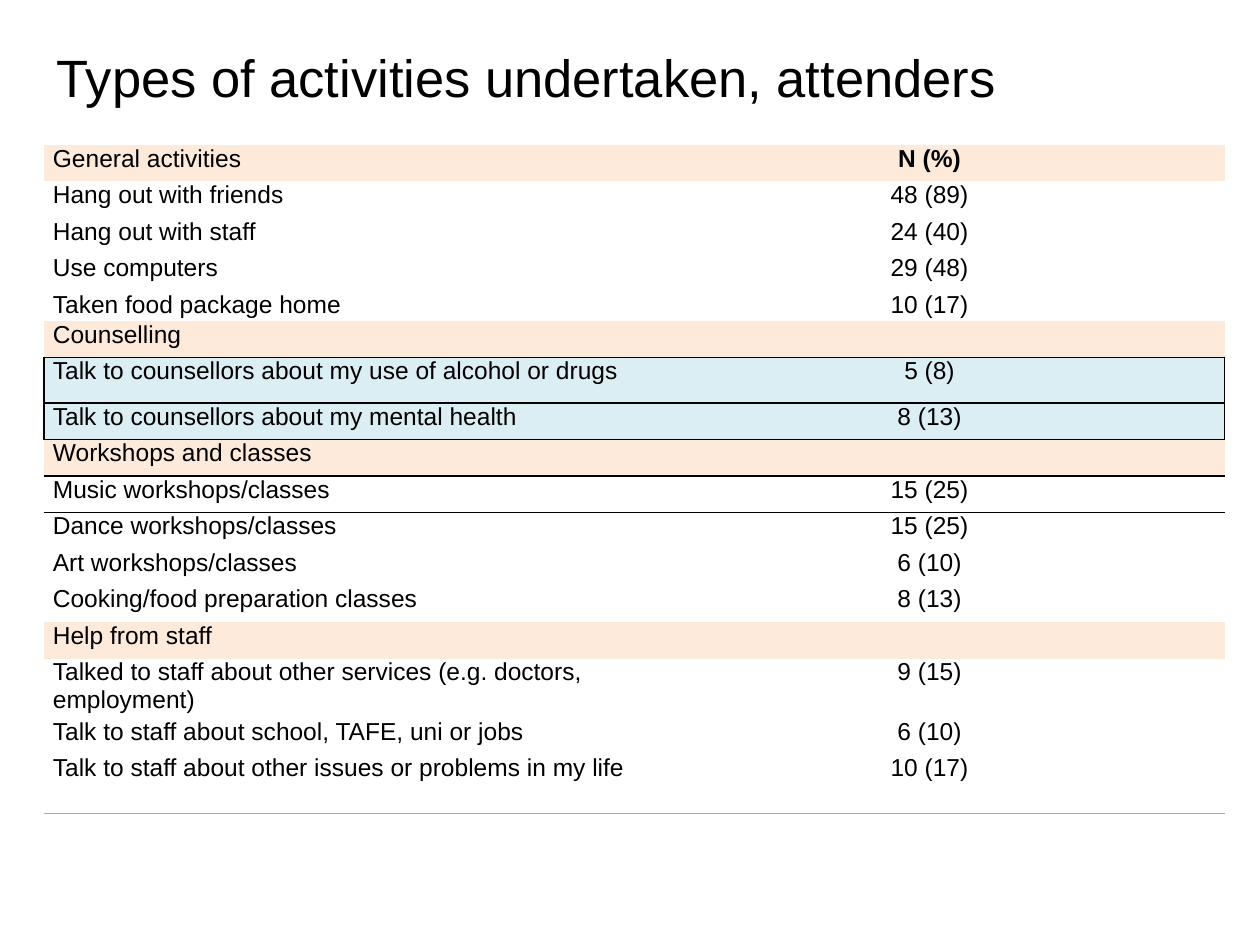
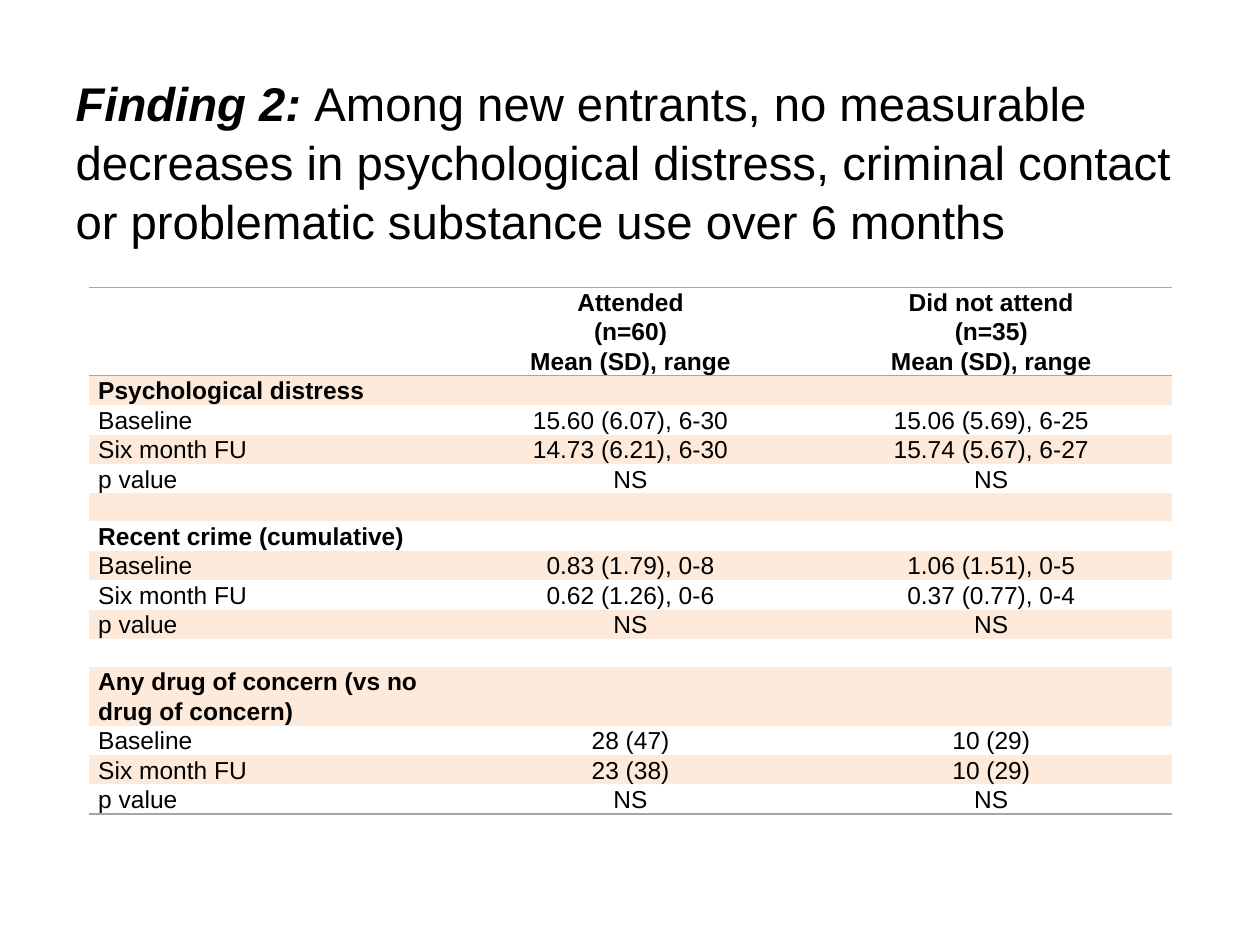
from lxml import etree
from pptx import Presentation
from pptx.dml.color import RGBColor
from pptx.enum.text import MSO_ANCHOR, MSO_AUTO_SIZE, PP_ALIGN
from pptx.oxml.ns import qn
from pptx.util import Inches, Pt

LEFT, MID = PP_ALIGN.LEFT, PP_ALIGN.CENTER
FONT = "Arial"
BLACK, PEACH, BLUE = "000000", "FDEADA", "DBEEF4"
ORANGE, GREY = "F79646", "A6A6A6"
PLAIN = "{2D5ABB26-0587-4C30-8999-92F81FD0307C}"  # table style without grid


def add_page(box, size, runs, space=1.0):
    """Add a slide whose title holds runs of (text, strong)."""
    page = deck.slides.add_slide(deck.slide_layouts[5])
    title = page.shapes.title
    title.left, title.top, title.width, title.height = map(Inches, box)
    frame = title.text_frame
    frame.auto_size = MSO_AUTO_SIZE.NONE
    frame.vertical_anchor = MSO_ANCHOR.MIDDLE
    para = frame.paragraphs[0]
    para.alignment, para.line_spacing = LEFT, space
    para.font.name, para.font.size = FONT, Pt(size)
    para.font.color.rgb = RGBColor.from_string(BLACK)
    for text, strong in runs:
        run = para.add_run()
        run.text = text
        run.font.bold = run.font.italic = strong
    return page


def add_grid(page, spot, wide, rows, highs, fills, bold, edges, space=1.0):
    """Add a table; edges maps a row to (sides, colour, points), bold holds (row, column)."""
    cols = len(rows[0])
    left, top = map(Inches, spot)
    table = page.shapes.add_table(
        len(rows), cols, left, top, Inches(wide), Inches(sum(highs))).table
    table.first_row = table.horz_banding = False
    table._tbl.tblPr.find(qn("a:tableStyleId")).text = PLAIN
    for col in table.columns:
        col.width = Inches(wide / cols)
    for r, texts in enumerate(rows):
        table.rows[r].height = Inches(highs[r])
        sides, tint, width = edges.get(r, ("", BLACK, 1))
        for c, text in enumerate(texts):
            cell = table.cell(r, c)
            cell.margin_left = cell.margin_right = Inches(0.07)
            cell.margin_top = cell.margin_bottom = 0
            cell.text = text
            for para in cell.text_frame.paragraphs:
                para.alignment = MID if c else LEFT
                para.line_spacing = space
                para.font.name, para.font.size = FONT, Pt(14)
                para.font.bold = (r, c) in bold
                para.font.color.rgb = RGBColor.from_string(BLACK)
            props = cell._tc.get_or_add_tcPr()
            for side in sides:
                if (side == "L" and c) or (side == "R" and c < cols - 1):
                    continue
                line = etree.SubElement(props, qn(f"a:ln{side}"), w=str(Pt(width)))
                fill = etree.SubElement(line, qn("a:solidFill"))
                etree.SubElement(fill, qn("a:srgbClr"), val=tint)
            if r in fills:
                cell.fill.solid()
                cell.fill.fore_color.rgb = RGBColor.from_string(fills[r])
            else:
                cell.fill.background()


deck = Presentation()
deck.slide_width, deck.slide_height = Inches(10), Inches(7.5)

# Activities
page = add_page((0.35, 0.29, 9, 0.63), 30,
                [("Types of activities undertaken, attenders", False)])
rows = [
    ("General activities", "N (%)"),
    ("Hang out with friends", "48 (89)"),
    ("Hang out with staff", "24 (40)"),
    ("Use computers", "29 (48)"),
    ("Taken food package home", "10 (17)"),
    ("Counselling", ""),
    ("Talk to counsellors about my use of alcohol or drugs", "5 (8)"),
    ("Talk to counsellors about my mental health", "8 (13)"),
    ("Workshops and classes", ""),
    ("Music workshops/classes", "15 (25)"),
    ("Dance workshops/classes", "15 (25)"),
    ("Art workshops/classes", "6 (10)"),
    ("Cooking/food preparation classes", "8 (13)"),
    ("Help from staff", ""),
    ("Talked to staff about other services (e.g. doctors, employment)", "9 (15)"),
    ("Talk to staff about school, TAFE, uni or jobs", "6 (10)"),
    ("Talk to staff about other issues or problems in my life", "10 (17)"),
]
tall = {4: 0.24, 6: 0.36, 14: 0.47, 16: 0.47}
highs = [tall.get(r, 0.29) for r in range(len(rows))]
fills = dict.fromkeys((0, 5, 8, 13), PEACH) | dict.fromkeys((6, 7), BLUE)
edges = {5: ("B", BLACK, 1), 6: ("LRTB", BLACK, 1), 7: ("LRTB", BLACK, 1),
         8: ("TB", BLACK, 1), 9: ("T", BLACK, 1), 16: ("B", ORANGE, 1)}
add_grid(page, (0.35, 1.15), 9.37, rows, highs, fills, {(0, 1)}, edges)

# Finding 2
page = add_page((0.5, 0.52, 9, 1.5), 27, [
    ("Finding 2: ", True),
    ("Among new entrants, no measurable decreases in psychological distress, "
     "criminal contact or problematic substance use over 6 months", False),
], 1.04)
rows = [
    ("", "Attended\n(n=60)\nMean (SD), range", "Did not attend\n(n=35)\nMean (SD), range"),
    ("Psychological distress", "", ""),
    ("Baseline", "15.60 (6.07), 6-30", "15.06 (5.69), 6-25"),
    ("Six month FU", "14.73 (6.21), 6-30", "15.74 (5.67), 6-27"),
    ("p value", "NS", "NS"),
    ("", "", ""),
    ("Recent crime (cumulative)", "", ""),
    ("Baseline", "0.83 (1.79), 0-8", "1.06 (1.51), 0-5"),
    ("Six month FU", "0.62 (1.26), 0-6", "0.37 (0.77), 0-4"),
    ("p value", "NS", "NS"),
    ("", "", ""),
    ("Any drug of concern (vs no drug of concern)", "", ""),
    ("Baseline", "28 (47)", "10 (29)"),
    ("Six month FU", "23 (38)", "10 (29)"),
    ("p value", "NS", "NS"),
]
tall = {0: 0.69, 11: 0.46}
highs = [tall.get(r, 0.22) for r in range(len(rows))]
fills = dict.fromkeys(range(1, len(rows), 2), PEACH)
bold = {(0, 1), (0, 2), (1, 0), (6, 0), (11, 0)}
edges = {0: ("TB", GREY, 0.75), 14: ("B", GREY, 0.75)}
add_grid(page, (0.71, 2.28), 8.59, rows, highs, fills, bold, edges, 1.07)

deck.save("out.pptx")
